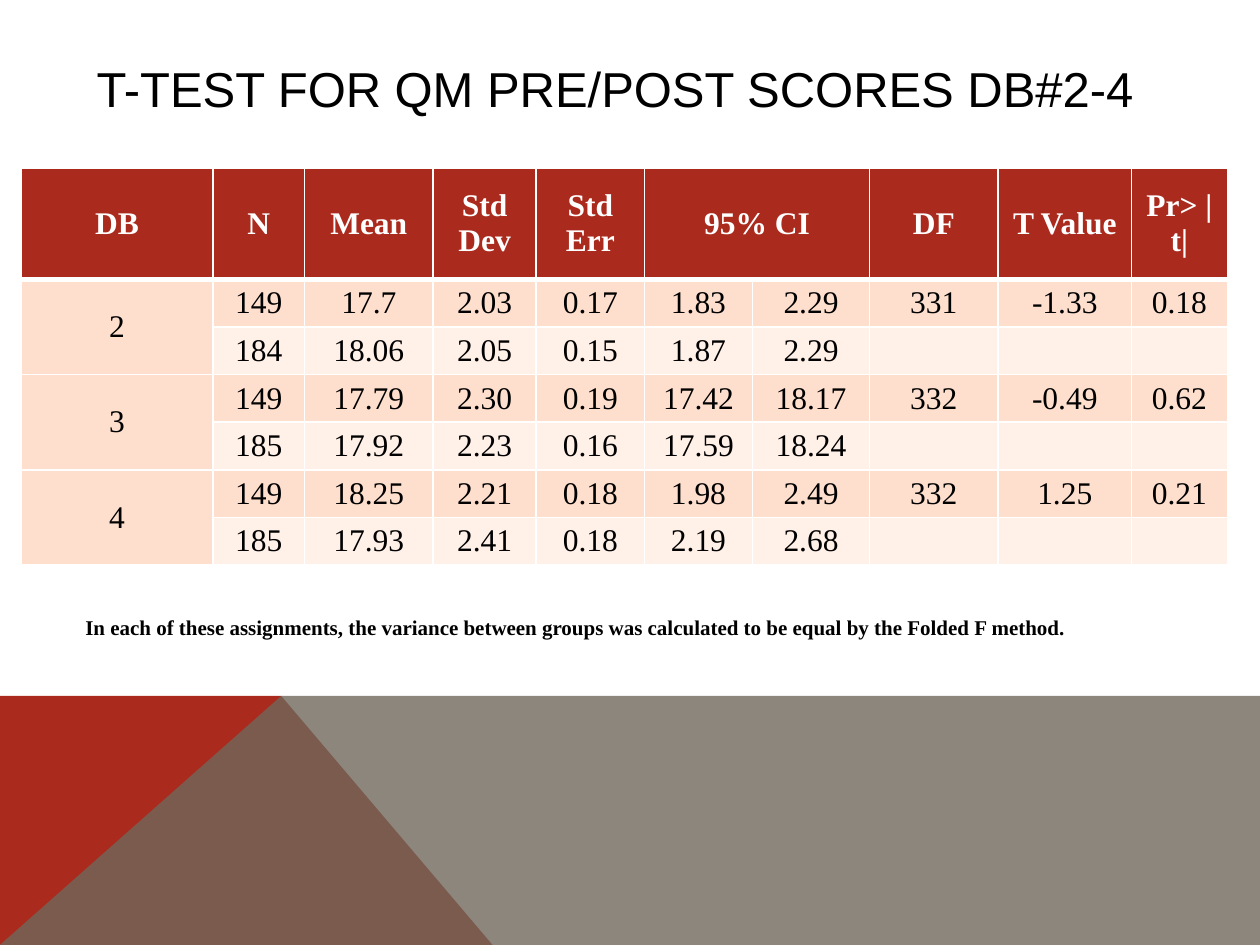
"""Build the slide with the t-test table for pre/post scores."""
import dataclasses

import lxml.etree
import pptx
import pptx.dml.color
import pptx.enum.text
import pptx.oxml.ns
import pptx.util

Cm = pptx.util.Cm
Pt = pptx.util.Pt
qn = pptx.oxml.ns.qn
ALIGN = pptx.enum.text.PP_ALIGN
ANCHOR = pptx.enum.text.MSO_ANCHOR


@dataclasses.dataclass(frozen=True)
class Theme:
    ink: str = "000000"
    paper: str = "FFFFFF"
    accent: str = "AA2B1E"
    stone: str = "71685C"
    band_dark: str = "FEDFCD"
    band_light: str = "FFF0E8"
    title_font: str = "Arial"
    body_font: str = "Times New Roman"
    title_size: int = 28
    table_size: int = 18
    note_size: int = 12


class Builder:
    def __init__(self, slide, theme):
        self.s = slide
        self.theme = theme

    def paint(self, fill, color):
        fill.solid()
        fill.fore_color.rgb = pptx.dml.color.RGBColor.from_string(color)

    def set_text(self, tf, text, font, size, color, bold=False, align=ALIGN.LEFT):
        tf.text = text
        p = tf.paragraphs[0]
        p.alignment = align
        for r in p.runs:
            r.font.name = font
            r.font.size = Pt(size)
            r.font.bold = bold
            r.font.color.rgb = pptx.dml.color.RGBColor.from_string(color)
        return p

    def text(self, box, text, font, size, bold=False, anchor=ANCHOR.TOP):
        sp = self.s.shapes.add_textbox(*map(Cm, box))
        tf = sp.text_frame
        tf.word_wrap = True
        tf.margin_right = 0
        tf.vertical_anchor = anchor
        return self.set_text(tf, text, font, size, self.theme.ink, bold)

    def polygon(self, points, color, opacity=100):
        start, *rest = [(Cm(x), Cm(y)) for x, y in points]
        fb = self.s.shapes.build_freeform(*start)
        fb.add_line_segments(rest, close=True)
        sp = fb.convert_to_shape()
        sp.shadow.inherit = False
        sp.line.fill.background()
        self.paint(sp.fill, color)
        if opacity < 100:
            clr = sp.fill._xPr.find(".//" + qn("a:srgbClr"))
            lxml.etree.SubElement(clr, qn("a:alpha"), val=str(opacity * 1000))

    def border(self, cell, side, width):
        tcPr = cell._tc.get_or_add_tcPr()
        ln = lxml.etree.SubElement(tcPr, qn("a:" + side), w=str(Pt(width)))
        fill = lxml.etree.SubElement(ln, qn("a:solidFill"))
        lxml.etree.SubElement(fill, qn("a:srgbClr"), val=self.theme.paper)

    def cell(self, cell, text, fill, color, header, below_header):
        cell.margin_top = cell.margin_bottom = Cm(0.08)
        cell.vertical_anchor = ANCHOR.MIDDLE
        widths = {"lnL": 1, "lnR": 1, "lnT": 3 if below_header else 1,
                  "lnB": 3 if header else 1}
        for side, width in widths.items():
            self.border(cell, side, width)
        self.paint(cell.fill, fill)
        if text:
            self.set_text(cell.text_frame, text, self.theme.body_font,
                          self.theme.table_size, color, header, ALIGN.CENTER)

    def table(self, left, top, widths, heights, rows, merges):
        th = self.theme
        tbl = self.s.shapes.add_table(
            len(rows), len(widths), Cm(left), Cm(top),
            Cm(sum(widths)), Cm(sum(heights))).table
        for col, width in zip(tbl.columns, widths):
            col.width = Cm(width)
        for row, height in zip(tbl.rows, heights):
            row.height = Cm(height)
        for i, values in enumerate(rows):
            for j, value in enumerate(values):
                header = i == 0
                if header:
                    fill, color = th.accent, th.paper
                else:
                    dark = j == 0 or i % 2
                    fill = th.band_dark if dark else th.band_light
                    color = th.ink
                self.cell(tbl.cell(i, j), value, fill, color, header, i == 1)
        for first, last in merges:
            tbl.cell(*first).merge(tbl.cell(*last))


HEADER = ["DB", "N", "Mean", "Std Dev", "Std Err", "95% CI", "",
          "DF", "T Value", "Pr> |t|"]
SCORES = [
    ["2", "149", "17.7", "2.03", "0.17", "1.83", "2.29", "331", "-1.33", "0.18"],
    ["", "184", "18.06", "2.05", "0.15", "1.87", "2.29", "", "", ""],
    ["3", "149", "17.79", "2.30", "0.19", "17.42", "18.17", "332", "-0.49", "0.62"],
    ["", "185", "17.92", "2.23", "0.16", "17.59", "18.24", "", "", ""],
    ["4", "149", "18.25", "2.21", "0.18", "1.98", "2.49", "332", "1.25", "0.21"],
    ["", "185", "17.93", "2.41", "0.18", "2.19", "2.68", "", "", ""],
]
COLUMN_WIDTHS = [3.86, 1.85, 2.59, 2.08, 2.18, 2.18, 2.36, 2.59, 2.69, 1.93]
ROW_HEIGHTS = [2.24] + [0.96] * len(SCORES)


def main():
    prs = pptx.Presentation()
    prs.slide_width, prs.slide_height = Cm(25.4), Cm(19.05)
    theme = Theme()
    b = Builder(prs.slides.add_slide(prs.slide_layouts[6]), theme)

    bottom, horizon, peak = 19.05, 14.03, 5.67
    b.polygon([(0, bottom), (0, horizon), (peak, horizon), (9.93, bottom)],
              theme.accent)
    b.polygon([(0, bottom), (peak, horizon), (25.4, horizon), (25.4, bottom)],
              theme.stone, 80)

    b.text((1.7, 1.02, 21.49, 1.52), "T-TEST FOR QM PRE/POST SCORES DB#2-4",
           theme.title_font, theme.title_size, anchor=ANCHOR.MIDDLE)
    note = b.text((1.47, 12.27, 22.43, 1.9),
                  "In each of these assignments, the variance between groups "
                  "was calculated to be equal by the Folded F method.",
                  theme.body_font, theme.note_size, bold=True)
    note.space_before = Pt(8)

    merges = [((0, 5), (0, 6))] + [((i, 0), (i + 1, 0)) for i in (1, 3, 5)]
    b.table(0.43, 3.39, COLUMN_WIDTHS, ROW_HEIGHTS, [HEADER] + SCORES, merges)
    prs.save("out.pptx")


if __name__ == "__main__":
    main()
